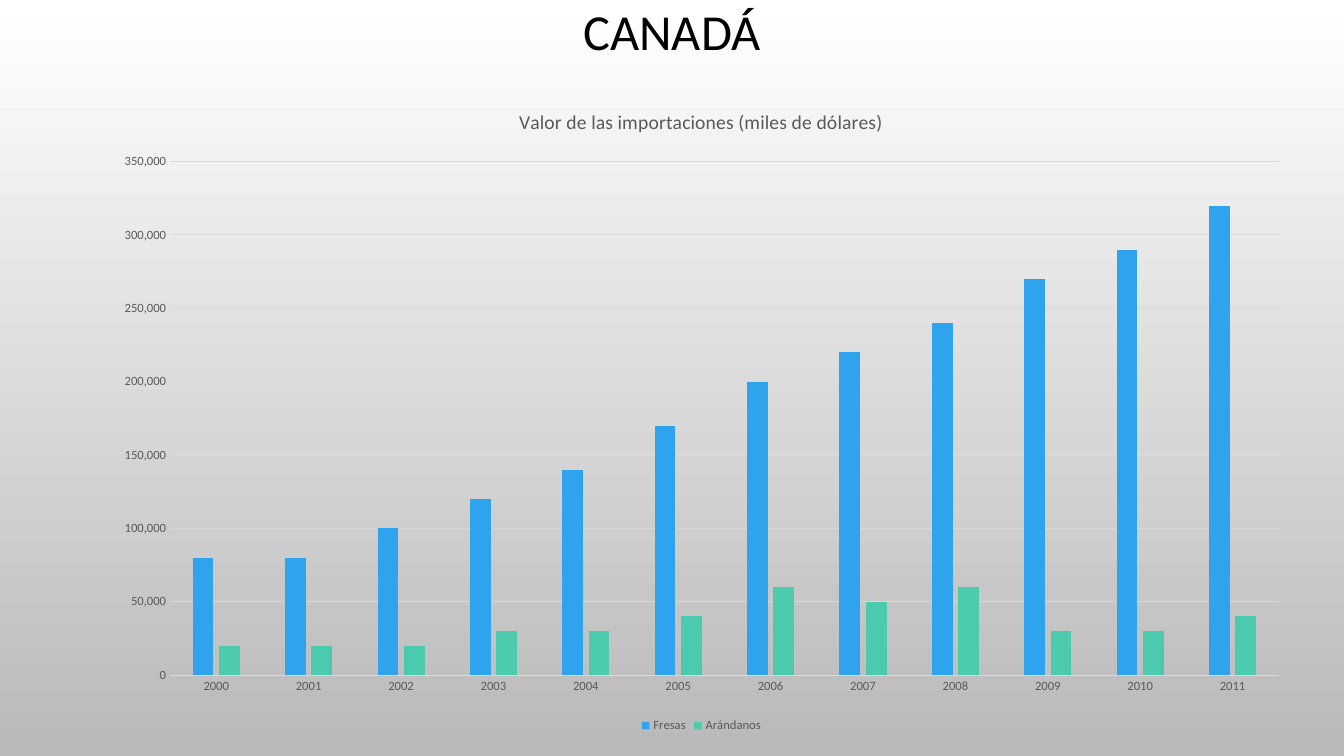
import pptx
import pptx.chart.data
import pptx.dml.color
import pptx.enum.chart
import pptx.enum.text
import pptx.oxml
import pptx.oxml.ns
import pptx.util

PX = 9525
FONT = "Calibri"
GREY, RULE = "595959", "D9D9D9"
YEARS = [str(year) for year in range(2000, 2012)]
IMPORTS = {
    "Fresas": ("2FA3EE", [80000, 80000, 100000, 120000, 140000, 170000,
                          200000, 220000, 240000, 270000, 290000, 320000]),
    "Arándanos": ("4BCAAD", [20000, 20000, 20000, 30000, 30000, 40000,
                             60000, 50000, 60000, 30000, 30000, 40000]),
}


def px(length):
    return pptx.util.Emu(length * PX)


def rgb(value):
    return pptx.dml.color.RGBColor.from_string(value)


def style_font(font, size, color):
    font.name = FONT
    font.size = pptx.util.Pt(size)
    font.bold = False
    font.color.rgb = rgb(color)


def write_text(frame, text, size, color, align=pptx.enum.text.PP_ALIGN.CENTER, spacing=None):
    paragraph = frame.paragraphs[0]
    paragraph.alignment = align
    paragraph.line_spacing = spacing
    run = paragraph.add_run()
    run.text = text
    style_font(run.font, size, color)


def style_line(line, color):
    line.color.rgb = rgb(color)
    line.width = pptx.util.Pt(0.75)


def place_part(part, index, inner=False, **fractions):
    """Give a chart part a manual layout in fractions of the chart."""
    for old in part.findall(pptx.oxml.ns.qn("c:layout")):
        part.remove(old)
    target = '<c:layoutTarget val="inner"/>' if inner else ""
    modes = "".join(f'<c:{key}Mode val="edge"/>' for key in "xy")
    values = "".join(f'<c:{key} val="{value}"/>' for key, value in fractions.items())
    part.insert(index, pptx.oxml.parse_xml(
        f'<c:layout {pptx.oxml.ns.nsdecls("c")}><c:manualLayout>'
        f"{target}{modes}{values}</c:manualLayout></c:layout>"))


def paint_background(slide):
    fill = slide.background.fill
    fill.gradient()
    fill.gradient_angle = 270
    for stop, color in zip(fill.gradient_stops, ("FFFFFF", "B9B9B9")):
        stop.color.rgb = rgb(color)


def add_heading(slide, left, top, width, height):
    frame = slide.shapes.add_textbox(px(left), px(top), px(width), px(height)).text_frame
    frame.word_wrap = True
    frame.vertical_anchor = pptx.enum.text.MSO_ANCHOR.MIDDLE
    write_text(frame, "CANADÁ", size=36, color="000000", spacing=0.9)


def style_axes(chart):
    years, values = chart.category_axis, chart.value_axis
    for axis in (years, values):
        axis.major_tick_mark = axis.minor_tick_mark = pptx.enum.chart.XL_TICK_MARK.NONE
        style_font(axis.tick_labels.font, 9, GREY)
    style_line(years.format.line, RULE)
    values.format.line.fill.background()
    style_line(values.major_gridlines.format.line, RULE)
    values.minimum_scale, values.maximum_scale, values.major_unit = 0, 350000, 50000
    values.tick_labels.number_format = "#,##0"
    values.tick_labels.number_format_is_linked = False


def add_imports_chart(slide, left, top, width, height):
    data = pptx.chart.data.CategoryChartData(number_format="#,##0")
    data.categories = YEARS
    for fruit, (_, amounts) in IMPORTS.items():
        data.add_series(fruit, amounts)
    chart = slide.shapes.add_chart(
        pptx.enum.chart.XL_CHART_TYPE.COLUMN_CLUSTERED,
        px(left), px(top), px(width), px(height), data).chart
    style_font(chart.font, 10, "000000")

    heading = chart.chart_title
    write_text(heading.text_frame, "Valor de las importaciones (miles de dólares)",
               size=14, color=GREY)
    heading.include_in_layout = False
    place_part(heading._element, 1, x=395 / width, y=17 / height)

    chart.has_legend = True
    chart.legend.position = pptx.enum.chart.XL_LEGEND_POSITION.BOTTOM
    chart.legend.include_in_layout = False
    style_font(chart.legend.font, 9, GREY)

    style_axes(chart)
    columns = chart.plots[0]
    columns.gap_width, columns.overlap = 219, -27
    columns.vary_by_categories = False
    for series, (color, _) in zip(columns.series, IMPORTS.values()):
        series.format.fill.solid()
        series.format.fill.fore_color.rgb = rgb(color)
    plot_area = chart._chartSpace.chart.plotArea
    place_part(plot_area, 0, inner=True,
               x=66 / width, y=71 / height, w=1056 / width, h=489 / height)


def main():
    deck = pptx.Presentation()
    deck.slide_width, deck.slide_height = px(1280), px(720)
    slide = deck.slides.add_slide(deck.slide_layouts[6])
    paint_background(slide)
    add_heading(slide, 96, 0, 1088, 66)
    add_imports_chart(slide, 96, 83, 1144, 619)
    deck.save("out.pptx")


if __name__ == "__main__":
    main()
